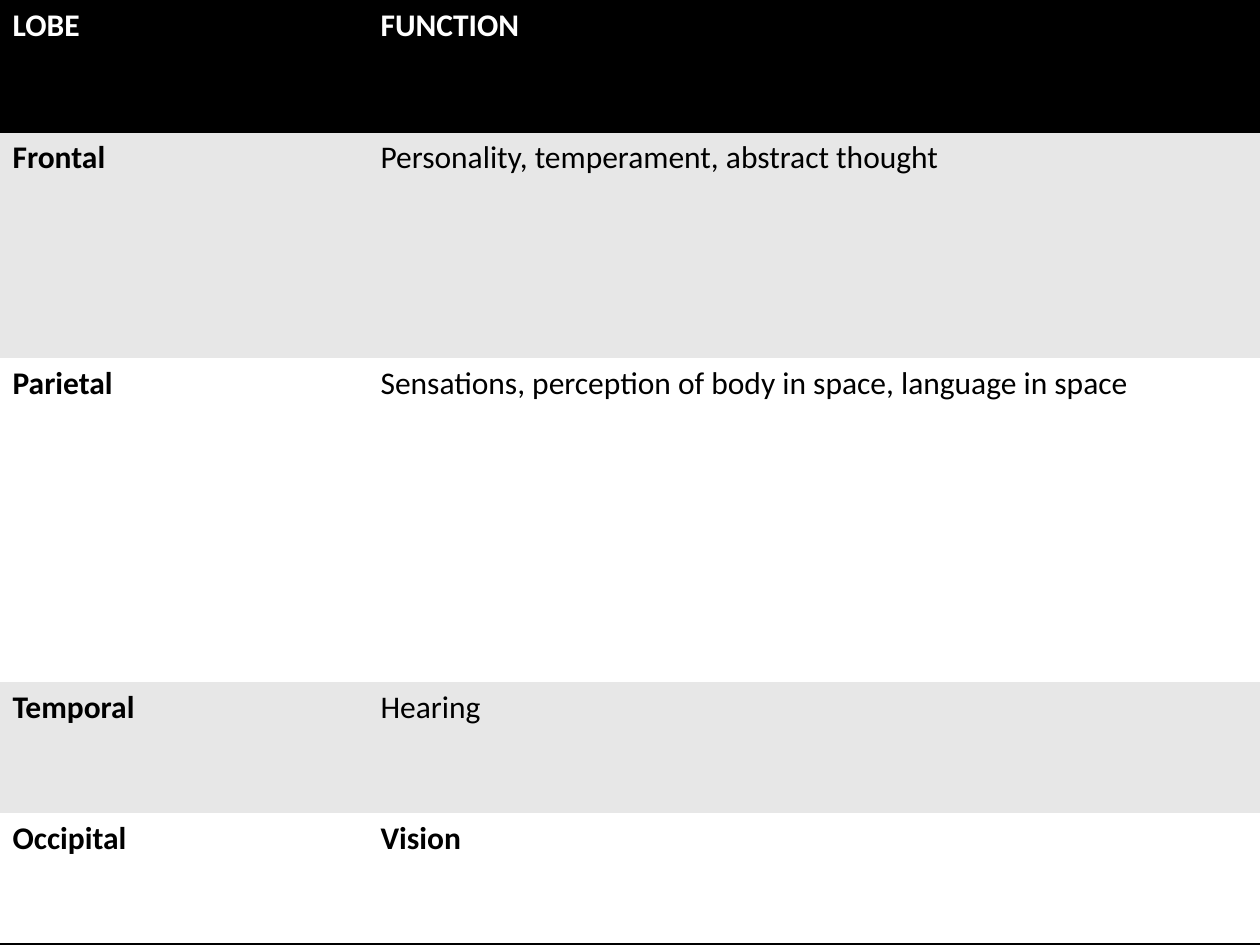
from lxml.etree import SubElement
from pptx import Presentation
from pptx.dml.color import RGBColor
from pptx.oxml.ns import qn
from pptx.util import Pt

EMU_PER_PX = 914400 // 126
SLIDE_WIDTH, SLIDE_HEIGHT = 1260, 945
COLUMN_WIDTHS = [368, 892]
ROW_HEIGHTS = [132, 226, 324, 131, 132]
BLACK = RGBColor(0x00, 0x00, 0x00)
WHITE = RGBColor(0xFF, 0xFF, 0xFF)
GREY = RGBColor(0xE7, 0xE7, 0xE7)
PLAIN_STYLE = "{2D5ABB26-0587-4C30-8999-92F81FD0307C}"
LOBES = [
    ("LOBE", "FUNCTION"),
    ("Frontal", "Personality, temperament, abstract thought"),
    ("Parietal", "Sensations, perception of body in space, language in space"),
    ("Temporal", "Hearing"),
    ("Occipital", "Vision"),
]


def px(length):
    return length * EMU_PER_PX


def write_text(frame, text, color=BLACK, bold=False, size=18, font="Calibri"):
    run = frame.paragraphs[0].add_run()
    run.text = text
    run.font.name = font
    run.font.size = Pt(size)
    run.font.bold = bold
    run.font.color.rgb = color


def add_border(cell, side, color=BLACK, width=2):
    border = SubElement(cell._tc.get_or_add_tcPr(), qn(f"a:ln{side}"), w=str(Pt(width)))
    fill = SubElement(border, qn("a:solidFill"))
    SubElement(fill, qn("a:srgbClr"), val=str(color))


def fill_cell(cell, text, row, column):
    header, last = row == 0, row == len(LOBES) - 1
    if header:
        add_border(cell, "T")
    if header or last:
        add_border(cell, "B")
    cell.fill.solid()
    cell.fill.fore_color.rgb = BLACK if header else GREY if row % 2 else WHITE
    write_text(cell.text_frame, text, color=WHITE if header else BLACK,
               bold=header or last or column == 0)


def add_lobe_table(slide):
    table = slide.shapes.add_table(len(ROW_HEIGHTS), len(COLUMN_WIDTHS), 0, 0,
                                   px(SLIDE_WIDTH), px(SLIDE_HEIGHT)).table
    table.first_row = table.horz_banding = False
    table._tbl.tblPr.find(qn("a:tableStyleId")).text = PLAIN_STYLE
    for column, width in zip(table.columns, COLUMN_WIDTHS):
        column.width = px(width)
    for row, height in zip(table.rows, ROW_HEIGHTS):
        row.height = px(height)
    for row, texts in enumerate(LOBES):
        for column, text in enumerate(texts):
            fill_cell(table.cell(row, column), text, row, column)


def main():
    deck = Presentation()
    deck.slide_width, deck.slide_height = px(SLIDE_WIDTH), px(SLIDE_HEIGHT)
    add_lobe_table(deck.slides.add_slide(deck.slide_layouts[6]))
    deck.save("out.pptx")


if __name__ == "__main__":
    main()
